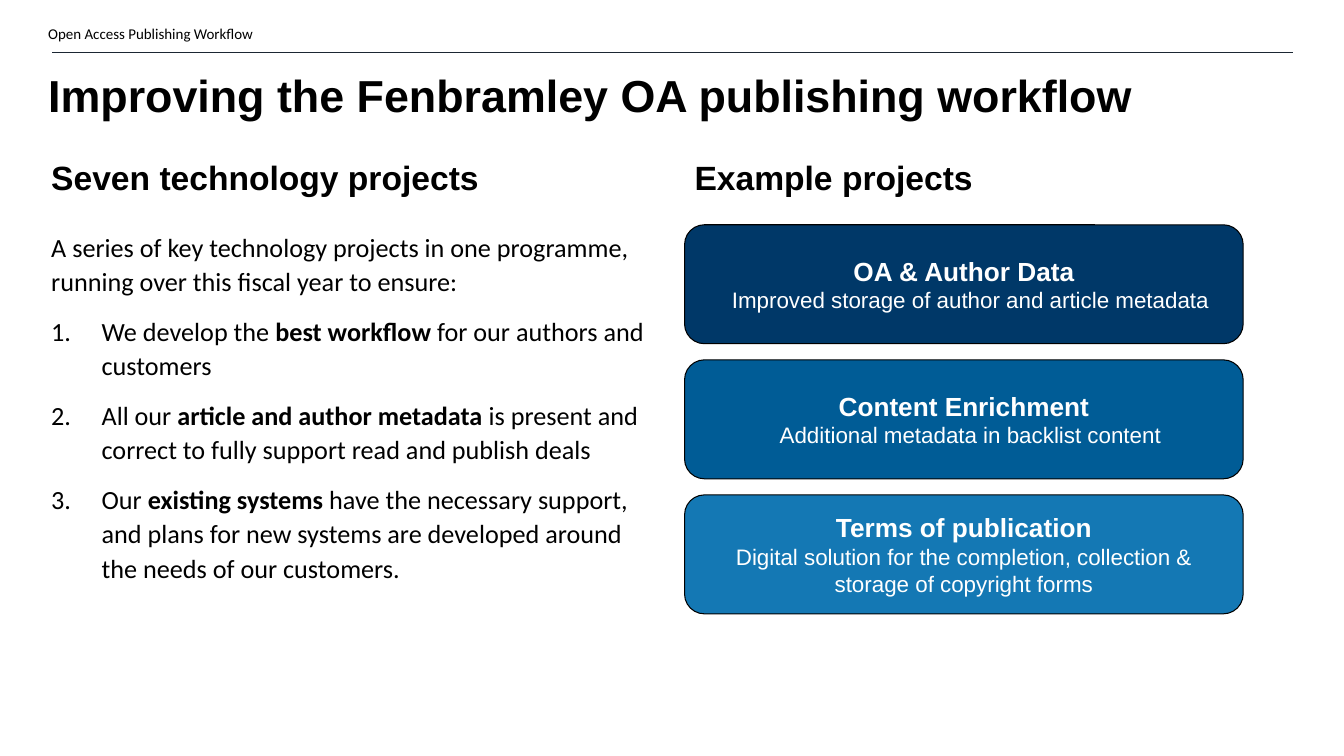
from dataclasses import dataclass

from lxml import etree
from pptx import Presentation
from pptx.dml.color import RGBColor
from pptx.enum.shapes import MSO_CONNECTOR, MSO_SHAPE
from pptx.enum.text import MSO_ANCHOR, PP_ALIGN
from pptx.oxml.ns import qn
from pptx.util import Emu, Pt

LEFT, CENTER = PP_ALIGN.LEFT, PP_ALIGN.CENTER
TOP, MIDDLE = MSO_ANCHOR.TOP, MSO_ANCHOR.MIDDLE
ROUNDED = MSO_SHAPE.ROUNDED_RECTANGLE
STRAIGHT = MSO_CONNECTOR.STRAIGHT
EMU_PER_PX = 9144  # 100 px to the inch


@dataclass(frozen=True)
class Theme:
    ink: str = "000000"
    paper: str = "FFFFFF"
    rule: str = "1B2733"
    navy: str = "003868"
    blue: str = "005C96"
    sky: str = "1478B4"
    heading_font: str = "Arial"
    body_font: str = "Calibri"
    title: float = 32
    heading: float = 24
    body: float = 18.7
    detail: float = 16
    header: float = 10.7


@dataclass(frozen=True)
class Style:
    size: float
    font: str
    color: str
    bold: bool = False


@dataclass(frozen=True)
class Box:
    left: int
    top: int
    width: int
    height: int


@dataclass(frozen=True)
class Label:
    text: str
    box: Box
    style: Style
    anchor: MSO_ANCHOR = TOP
    line_spacing: float = 1.0


@dataclass(frozen=True)
class Goal:
    lead: str
    emphasis: str
    rest: str


@dataclass(frozen=True)
class Project:
    name: str
    detail: str
    fill: str
    detail_indent: int = 0


THEME = Theme()
BODY = Style(THEME.body, THEME.body_font, THEME.ink)
BODY_BOLD = Style(THEME.body, THEME.body_font, THEME.ink, True)
HEADING = Style(THEME.heading, THEME.heading_font, THEME.ink, True)
TITLE = Style(THEME.title, THEME.heading_font, THEME.ink, True)
HEADER = Style(THEME.header, THEME.body_font, THEME.ink)
PROJECT_NAME = Style(THEME.body, THEME.heading_font, THEME.paper, True)
PROJECT_DETAIL = Style(THEME.detail, THEME.heading_font, THEME.paper)

LABELS = [
    Label("Open Access Publishing Workflow", Box(38, 19, 630, 36), HEADER),
    Label("Improving the Fenbramley OA publishing workflow",
          Box(38, 59, 1150, 77), TITLE, MIDDLE, 0.9),
    Label("Seven technology projects", Box(41, 151, 604, 56), HEADING),
    Label("Example projects", Box(679, 151, 604, 56), HEADING),
]
INTRO = ("A series of key technology projects in one programme, "
         "running over this fiscal year to ensure:")
GOALS = [
    Goal("We develop the ", "best workflow ", "for our authors and customers"),
    Goal("All our ", "article and author metadata ",
         "is present and correct to fully support read and publish deals"),
    Goal("Our ", "existing systems ",
         "have the necessary support, and plans for new systems are "
         "developed around the needs of our customers."),
]
GOALS_BOX = Box(41, 221, 627, 441)
GOAL_INDENT = 50
GOAL_FORMAT = {"line_spacing": 1.1, "space_before": Pt(10.7)}
PROJECTS = [
    Project("OA & Author Data", "Improved storage of author and article metadata",
            THEME.navy, 13),
    Project("Content Enrichment", "Additional metadata in backlist content",
            THEME.blue, 13),
    Project("Terms of publication",
            "Digital solution for the completion, collection & storage of copyright forms",
            THEME.sky),
]
FIRST_CARD = Box(679, 223, 554, 118)
CARD_PITCH = 134


def px(length: int) -> Emu:
    return Emu(length * EMU_PER_PX)


def place(box: Box) -> tuple[Emu, Emu, Emu, Emu]:
    return px(box.left), px(box.top), px(box.width), px(box.height)


def apply(target, values: dict) -> None:
    for attribute, value in values.items():
        setattr(target, attribute, value)


def add_run(paragraph, text: str, style: Style) -> None:
    run = paragraph.add_run()
    run.text = text
    apply(run.font, {"size": Pt(style.size), "name": style.font, "bold": style.bold})
    run.font.color.rgb = RGBColor.from_string(style.color)


def indent(paragraph, margin: int, first: int = 0) -> None:
    properties = paragraph._p.get_or_add_pPr()
    properties.set("marL", str(px(margin)))
    properties.set("indent", str(px(first)))


def number(paragraph) -> None:
    bullet = etree.SubElement(paragraph._p.get_or_add_pPr(), qn("a:buAutoNum"))
    bullet.set("type", "arabicPeriod")


def add_text_frame(slide, box: Box, anchor: MSO_ANCHOR = TOP):
    frame = slide.shapes.add_textbox(*place(box)).text_frame
    apply(frame, {"word_wrap": True, "vertical_anchor": anchor})
    return frame


def add_label(slide, label: Label) -> None:
    paragraph = add_text_frame(slide, label.box, label.anchor).paragraphs[0]
    apply(paragraph, {"alignment": LEFT, "line_spacing": label.line_spacing})
    add_run(paragraph, label.text, label.style)


def add_header_rule(slide) -> None:
    rule = slide.shapes.add_connector(STRAIGHT, px(52), px(52), px(1282), px(52))
    rule.line.color.rgb = RGBColor.from_string(THEME.rule)
    rule.line.width = Pt(0.25)
    etree.SubElement(rule._element.spPr, qn("a:effectLst"))


def add_goals(slide) -> None:
    frame = add_text_frame(slide, GOALS_BOX)
    intro = frame.paragraphs[0]
    intro.line_spacing = GOAL_FORMAT["line_spacing"]
    add_run(intro, INTRO, BODY)
    for goal in GOALS:
        paragraph = frame.add_paragraph()
        indent(paragraph, GOAL_INDENT, -GOAL_INDENT)
        number(paragraph)
        apply(paragraph, GOAL_FORMAT)
        add_run(paragraph, goal.lead, BODY)
        add_run(paragraph, goal.emphasis, BODY_BOLD)
        add_run(paragraph, goal.rest, BODY)


def add_project(slide, project: Project, box: Box) -> None:
    card = slide.shapes.add_shape(ROUNDED, *place(box))
    card.shadow.inherit = False
    card.fill.solid()
    card.fill.fore_color.rgb = RGBColor.from_string(project.fill)
    card.line.color.rgb = RGBColor.from_string(THEME.ink)
    card.line.width = Pt(0.75)
    frame = card.text_frame
    sides = ("margin_left", "margin_top", "margin_right", "margin_bottom")
    apply(frame, {side: px(10) for side in sides})
    apply(frame, {"word_wrap": True, "vertical_anchor": MIDDLE})
    name, detail = frame.paragraphs[0], frame.add_paragraph()
    name.alignment = detail.alignment = CENTER
    indent(detail, project.detail_indent)
    add_run(name, project.name, PROJECT_NAME)
    add_run(detail, project.detail, PROJECT_DETAIL)


def main() -> None:
    deck = Presentation()
    apply(deck, {"slide_width": px(1333), "slide_height": px(750)})
    slide = deck.slides.add_slide(deck.slide_layouts[6])

    # Header, title and column headings
    add_header_rule(slide)
    for label in LABELS:
        add_label(slide, label)

    # Left column: programme goals
    add_goals(slide)

    # Right column: project cards
    for row, project in enumerate(PROJECTS):
        top = FIRST_CARD.top + row * CARD_PITCH
        add_project(slide, project,
                    Box(FIRST_CARD.left, top, FIRST_CARD.width, FIRST_CARD.height))

    deck.save("out.pptx")


if __name__ == "__main__":
    main()
